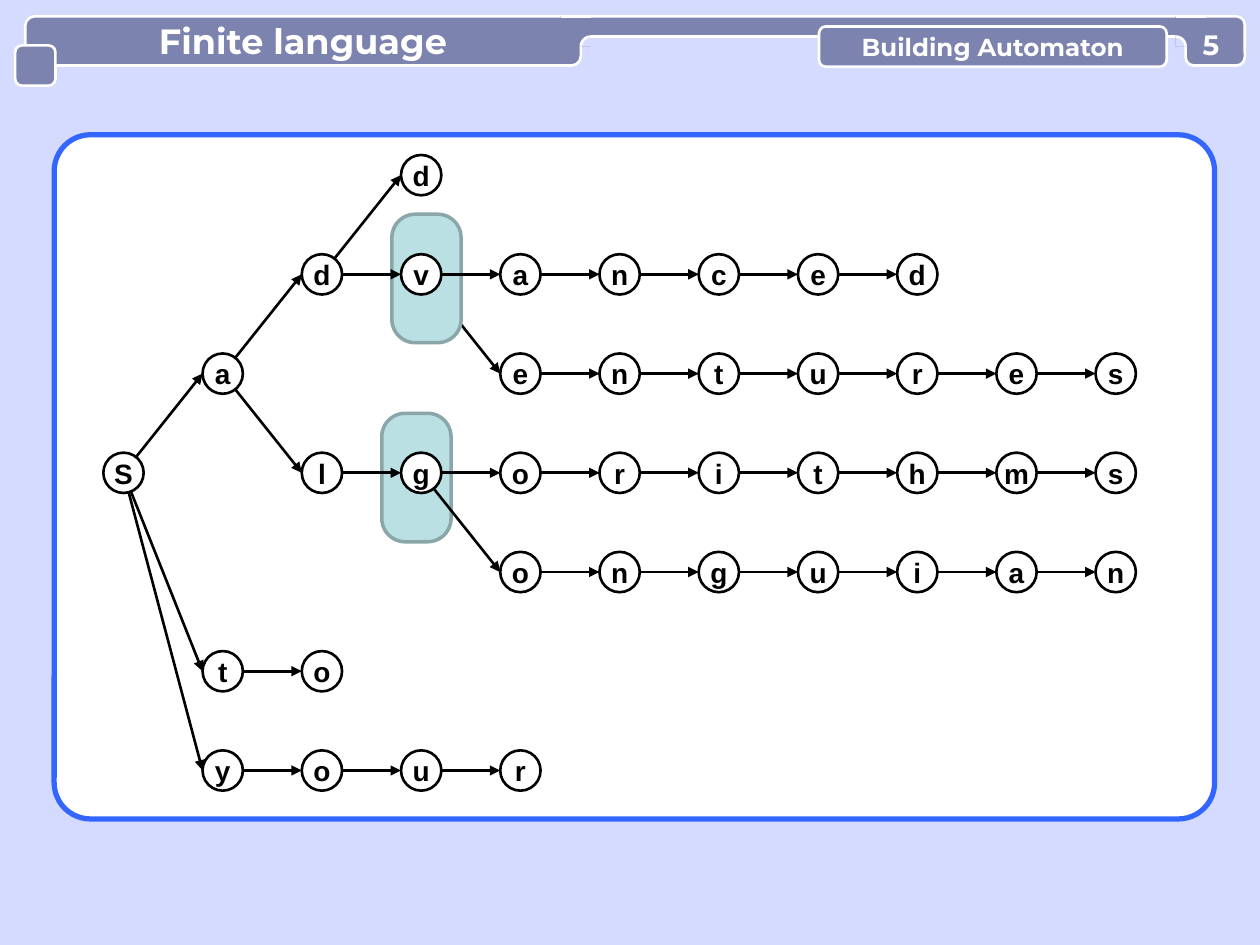
from math import cos, pi, sin

from lxml.etree import SubElement
from pptx import Presentation
from pptx.dml.color import RGBColor
from pptx.enum.shapes import MSO_CONNECTOR as Connector, MSO_SHAPE as Shape
from pptx.enum.text import MSO_ANCHOR as Anchor, PP_ALIGN as Align
from pptx.oxml.ns import qn
from pptx.util import Inches, Pt

CHAINS = [
    ("S", 0, 3),
    ("a", 1, 2),
    ("d", 3, 0),
    ("dvanced", 2, 1),
    ("entures", 4, 2),
    ("lgorithms", 2, 3),
    ("onguian", 4, 4),
    ("to", 1, 5),
    ("your", 1, 6),
]
COVERED_BRANCH = ((3, 1), (4, 2))
BRANCHES = [
    ((0, 3), (1, 2)),
    ((0, 3), (1, 5)),
    ((0, 3), (1, 6)),
    ((1, 2), (2, 1)),
    ((1, 2), (2, 3)),
    ((2, 1), (3, 0)),
    ((3, 3), (4, 4)),
]
HIGHLIGHTS = [(3.11, 1.7), (3.03, 3.28)]
TITLE, TOPIC, NUMBER = "Finite language", "Building Automaton", "5"

THEME = {
    "page": "D5DAFF", "white": "FFFFFF", "black": "000000",
    "panel_line": "3366FF", "bar": "7D83AF",
    "highlight": "BBE0E3", "highlight_line": "8AA6A8",
    "node_font": "Arial", "bar_font": "Montserrat",
    "title_size": 20, "topic_size": 14, "text_size": 16,
    "thin": 1.5, "medium": 2, "thick": 3,
}
LEFT, TOP, PITCH, NODE = 0.98, 1.39, 6.3 / 8, 0.32


def color(name):
    return RGBColor.from_string(THEME[name])


def paint(shape, fill=None, line=None, width="thin"):
    shape.shadow.inherit = False
    if fill:
        shape.fill.solid()
        shape.fill.fore_color.rgb = color(fill)
    else:
        shape.fill.background()
    if line:
        shape.line.color.rgb = color(line)
        shape.line.width = Pt(THEME[width])
    else:
        shape.line.fill.background()


def add_box(page, kind, place, fill, line=None, width="thin", corner=None):
    box = page.shapes.add_shape(kind, *map(Inches, place))
    paint(box, fill, line, width)
    if corner is not None:
        box.adjustments[0] = corner
    return box


def write(box, text, font, size, ink):
    frame = box.text_frame
    frame.word_wrap = False
    frame.vertical_anchor = Anchor.MIDDLE
    para = frame.paragraphs[0]
    para.text = text
    para.alignment = Align.CENTER
    para.font.name = THEME[font]
    para.font.size = Pt(THEME[size])
    para.font.bold = True
    para.font.color.rgb = color(ink)


def add_line(page, start, end, ink, arrow=False):
    line = page.shapes.add_connector(
        Connector.STRAIGHT, *map(Inches, (*start, *end)))
    line.line.color.rgb = color(ink)
    line.line.width = Pt(THEME["thin"])
    if arrow:
        SubElement(line.line._get_or_add_ln(), qn("a:tailEnd"), type="triangle")
    SubElement(line._element.spPr, qn("a:effectLst"))


def center(spot):
    column, row = spot
    return LEFT + column * PITCH, TOP + row * PITCH


def add_arrow(page, start, end, offset=0):
    x1, y1 = center(start)
    x2, y2 = center(end)
    add_line(page, (x1 + offset, y1), (x2 - NODE / 2, y2), "black", arrow=True)


def add_node(page, letter, spot):
    x, y = center(spot)
    node = add_box(page, Shape.OVAL, (x - NODE / 2, y - NODE / 2, NODE, NODE),
                   "white", "black")
    write(node, letter, "node_font", "text_size", "black")


def add_outline(page, points, closed):
    points = [(Inches(x), Inches(y)) for x, y in points]
    builder = page.shapes.build_freeform(*points[0])
    builder.add_line_segments(points[1:], close=closed)
    return builder.convert_to_shape()


def add_joint(page, left, hub, side):
    add_box(page, Shape.RECTANGLE, (left, 0.13, 0.24, 0.24), "bar")
    add_line(page, (left, 0.13), (left + 0.24, 0.13), "white")
    radius, bottom, steps = 0.08, 0.37, 10
    angles = [step * pi / 2 / steps for step in range(steps + 1)]
    arc = [(hub + side * radius * sin(a), bottom - radius * cos(a)) for a in angles]
    paint(add_outline(page, arc + [(hub, bottom)], True), "page")
    paint(add_outline(page, arc, False), line="white")


def add_graph(page):
    add_box(page, Shape.ROUNDED_RECTANGLE, (0.43, 1.07, 9.21, 5.43),
            "white", "panel_line", "thick", 0.053)
    add_arrow(page, *COVERED_BRANCH)
    for x, y in HIGHLIGHTS:
        add_box(page, Shape.ROUNDED_RECTANGLE, (x, y, 0.55, 1.02),
                "highlight", "highlight_line", "medium", 0.338)
    for start, end in BRANCHES:
        add_arrow(page, start, end)
    for letters, first, row in CHAINS:
        for column, letter in enumerate(letters, first):
            add_node(page, letter, (column, row))
            if column > first:
                add_arrow(page, (column - 1, row), (column, row), NODE / 2)


def add_header(page):
    def bar(place, corner=0.17):
        return add_box(page, Shape.ROUNDED_RECTANGLE, place, "bar", "white",
                       corner=corner)

    title = bar((0.2, 0.13, 4.41, 0.39), 0.188)
    write(title, TITLE, "bar_font", "title_size", "white")
    bar((4.61, 0.13, 4.88, 0.16), 0.5)
    add_joint(page, 4.45, 4.69, -1)
    bar((0.12, 0.36, 0.32, 0.32))
    bar((9.41, 0.13, 0.47, 0.39))
    add_joint(page, 9.33, 9.33, 1)
    topic = bar((6.5, 0.21, 2.76, 0.32))
    write(topic, TOPIC, "bar_font", "topic_size", "white")
    number = page.shapes.add_textbox(*map(Inches, (9.41, 0.22, 0.4, 0.27)))
    frame = number.text_frame
    frame.margin_left = frame.margin_right = 0
    frame.margin_top = frame.margin_bottom = 0
    write(number, NUMBER, "bar_font", "text_size", "white")


def main():
    deck = Presentation()
    deck.slide_width, deck.slide_height = Inches(10), Inches(7.5)
    page = deck.slides.add_slide(deck.slide_layouts[6])
    page.background.fill.solid()
    page.background.fill.fore_color.rgb = color("page")
    add_graph(page)
    add_header(page)
    deck.save("out.pptx")


if __name__ == "__main__":
    main()
